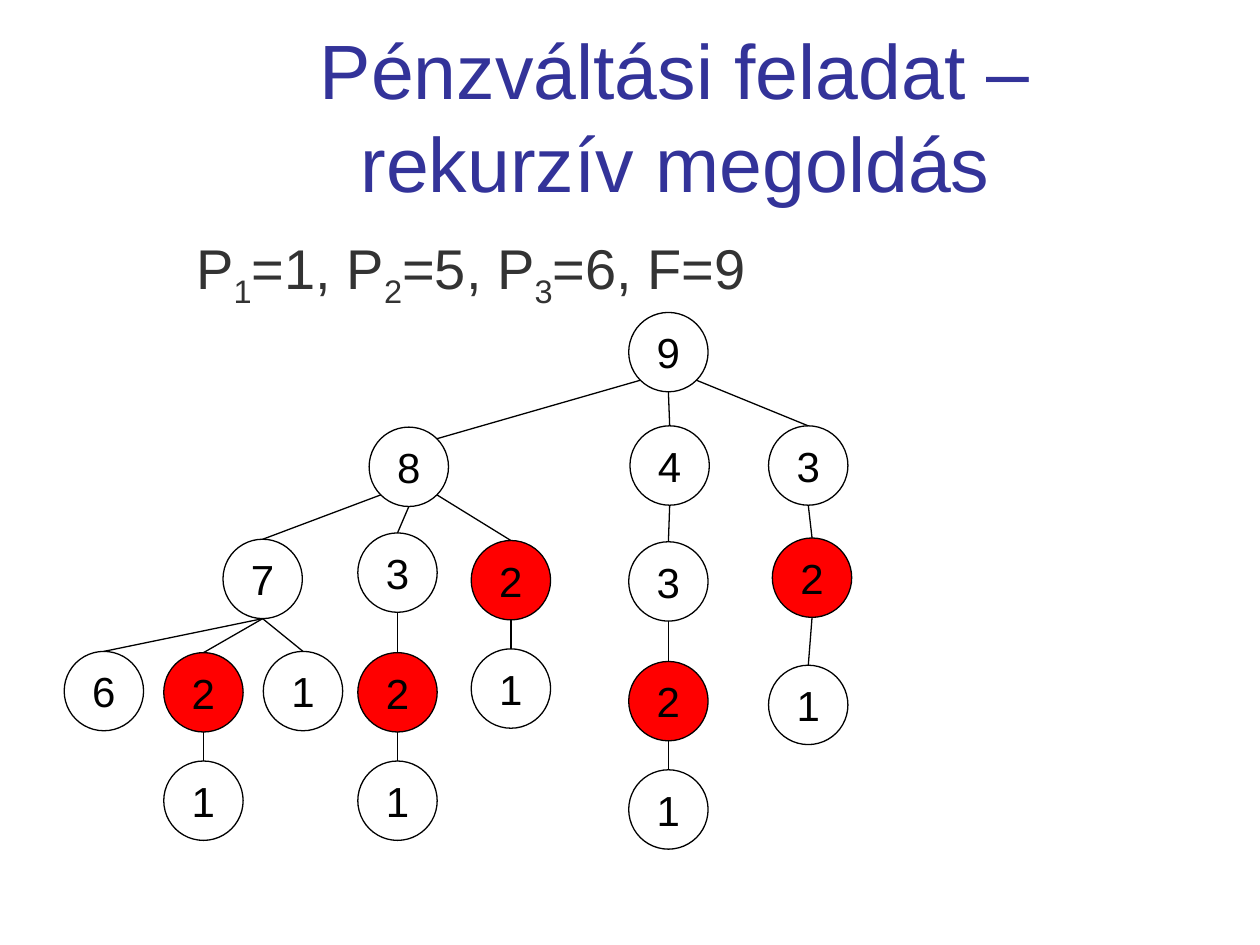
from math import sqrt

from lxml.etree import SubElement
from pptx import Presentation
from pptx.dml.color import RGBColor
from pptx.enum.shapes import MSO_CONNECTOR as Connector, MSO_SHAPE as Shape
from pptx.enum.text import MSO_ANCHOR as Anchor, PP_ALIGN as Align
from pptx.oxml.ns import qn
from pptx.util import Inches, Pt

DIAMETER = 0.63
RADIUS = DIAMETER / 2
DIAGONAL = RADIUS / sqrt(2)
EXITS = {
    "bottom": (0, RADIUS),
    "left": (-DIAGONAL, DIAGONAL),
    "right": (DIAGONAL, DIAGONAL),
}
BLACK, RED, BLUE, GRAY = "000000", "FF0000", "333399", "333333"

# Each node: amount, left, top, exit side on its parent, children
TREE = (9, 4.99, 2.48, None, [
    (8, 2.93, 3.39, "left", [
        (7, 1.77, 4.28, "left", [
            (6, 0.51, 5.17, "bottom", []),
            (2, 1.3, 5.18, "bottom", [(1, 1.3, 6.04, "bottom", [])]),
            (1, 2.09, 5.17, "bottom", []),
        ]),
        (3, 2.84, 4.23, "bottom", [
            (2, 2.84, 5.18, "bottom", [(1, 2.84, 6.04, "bottom", [])]),
        ]),
        (2, 3.74, 4.29, "right", [(1, 3.74, 5.15, "bottom", [])]),
    ]),
    (4, 5, 3.38, "bottom", [
        (3, 4.99, 4.3, "bottom", [
            (2, 4.99, 5.25, "bottom", [(1, 4.99, 6.11, "bottom", [])]),
        ]),
    ]),
    (3, 6.1, 3.38, "right", [
        (2, 6.13, 4.27, "bottom", [(1, 6.1, 5.28, "bottom", [])]),
    ]),
])


def color(value):
    """Turn a hex string into a colour."""
    return RGBColor.from_string(value)


def apply(target, values):
    """Set attributes from a dict of format values."""
    for name, value in values.items():
        setattr(target, name, value)


def add_span(para, text, size, ink, baseline=0):
    """Add a run of text, lowered when a baseline is given."""
    span = para.add_run()
    span.text = text
    apply(span.font, {"name": "Arial", "size": Pt(size)})
    span.font.color.rgb = color(ink)
    if baseline:
        span._r.get_or_add_rPr().set("baseline", str(baseline * 1000))


def add_title(page, text):
    """Add the centred heading."""
    box = page.shapes.add_textbox(Inches(1.3), Inches(0.29), Inches(8.12), Inches(1.25))
    apply(box.text_frame, {"word_wrap": True, "vertical_anchor": Anchor.MIDDLE})
    para = box.text_frame.paragraphs[0]
    para.alignment = Align.CENTER
    add_span(para, text, 44, BLUE)


def add_formula(page, parts):
    """Add the coin values; every second part is a subscript."""
    box = page.shapes.add_textbox(Inches(1.46), Inches(1.76), Inches(4.67), Inches(0.81))
    apply(box.text_frame, {"word_wrap": False, "margin_top": Inches(0.09)})
    para = box.text_frame.paragraphs[0]
    for index, part in enumerate(parts):
        add_span(para, part, 32, GRAY, -25 if index % 2 else 0)


def add_node(page, amount, left, top):
    """Add one circle, red when the amount is 2."""
    node = page.shapes.add_shape(
        Shape.OVAL, Inches(left), Inches(top), Inches(DIAMETER), Inches(DIAMETER))
    node.shadow.inherit = False
    if amount == 2:
        node.fill.solid()
        node.fill.fore_color.rgb = color(RED)
    else:
        node.fill.background()
    node.line.color.rgb = color(BLACK)
    node.line.width = Pt(0.75)
    apply(node.text_frame, {
        "word_wrap": False, "vertical_anchor": Anchor.MIDDLE,
        "margin_left": 0, "margin_right": 0})
    para = node.text_frame.paragraphs[0]
    para.alignment = Align.CENTER
    add_span(para, str(amount), 24, BLACK)
    return node


def add_edge(page, start, end):
    """Add a straight black line between two points."""
    edge = page.shapes.add_connector(
        Connector.STRAIGHT, *(Inches(length) for length in (*start, *end)))
    edge.line.color.rgb = color(BLACK)
    edge.line.width = Pt(0.75)
    SubElement(edge._element.spPr, qn("a:effectLst"))
    return edge


def add_tree(page, tree):
    """Add a node, its subtrees and the lines that join them."""
    amount, left, top, _, children = tree
    node = add_node(page, amount, left, top)
    for child in children:
        child_left, child_top, side = child[1:4]
        across, down = EXITS[side]
        start = left + RADIUS + across, top + RADIUS + down
        end = child_left + RADIUS, child_top
        if amount == 9 and side == "left":
            end = end[0] + DIAGONAL, child_top + RADIUS - DIAGONAL
        child_node = add_tree(page, child)
        edge = add_edge(page, start, end)
        if end[1] == child_top:
            edge.end_connect(child_node, 0)
    return node


def main():
    """Build the slide and save it."""
    deck = Presentation()
    apply(deck, {"slide_width": Inches(10), "slide_height": Inches(7.5)})
    page = deck.slides.add_slide(deck.slide_layouts[6])
    add_title(page, "Pénzváltási feladat – rekurzív megoldás")
    add_formula(page, ["P", "1", "=1, P", "2", "=5, P", "3", "=6, F=9"])
    add_tree(page, TREE)
    deck.save("out.pptx")


if __name__ == "__main__":
    main()
